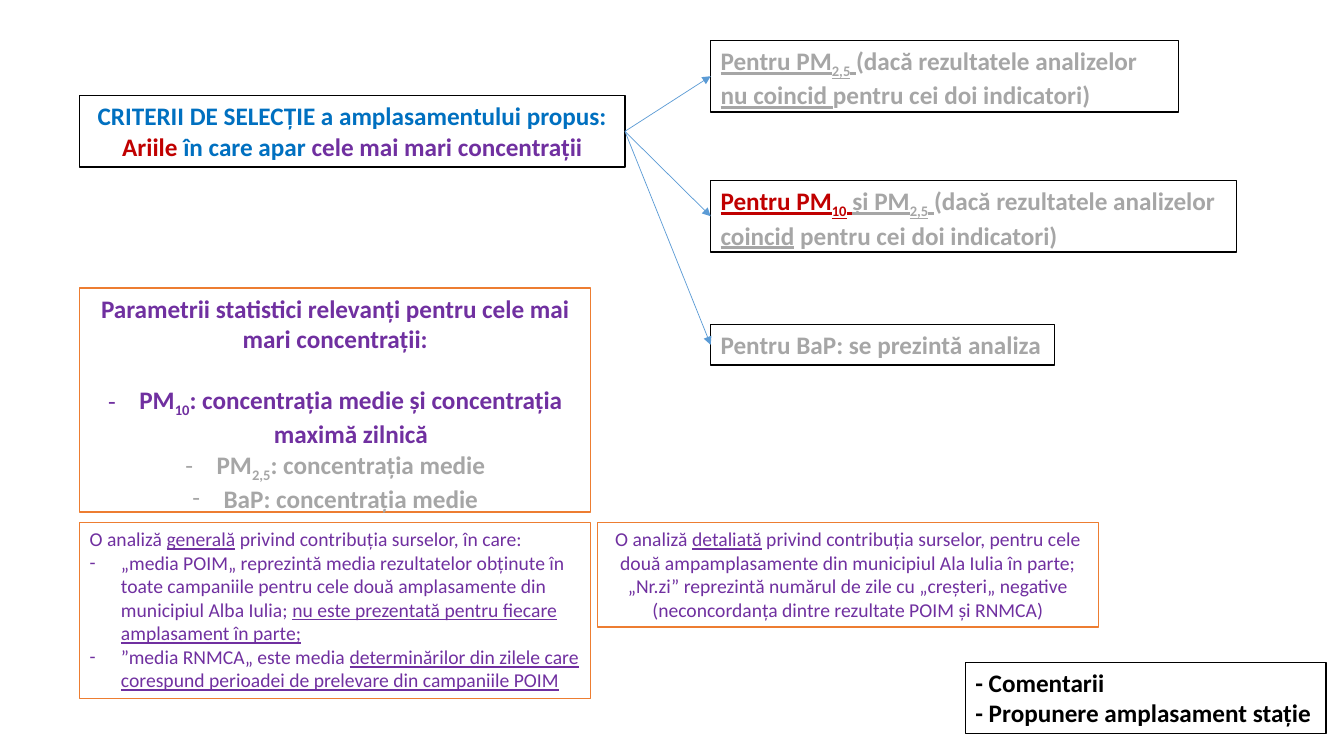
from lxml import etree
from pptx import Presentation
from pptx.dml.color import RGBColor
from pptx.enum.shapes import MSO_CONNECTOR, MSO_SHAPE
from pptx.enum.text import MSO_ANCHOR, PP_ALIGN
from pptx.oxml.ns import qn
from pptx.util import Cm, Pt

RECTANGLE = MSO_SHAPE.RECTANGLE
STRAIGHT = MSO_CONNECTOR.STRAIGHT
TOP = MSO_ANCHOR.TOP
LEFT, CENTER = PP_ALIGN.LEFT, PP_ALIGN.CENTER
LEFT_SITE, RIGHT_SITE = 1, 3
COLORS = {
    "white": "FFFFFF", "black": "000000", "blue": "0070C0", "red": "C00000",
    "purple": "7030A0", "gray": "A6A6A6", "orange": "ED7D31", "arrow": "5B9BD5",
}
LEFT_EDGE, BRANCH_EDGE = 2.01, 17.91
LEFT_WIDTH, TWO_LINES = 12.88, 1.8
ANALYSIS_TOP = 13.16


def color(name):
    """Return the named colour."""
    return RGBColor.from_string(COLORS[name])


def add_bullet(paragraph):
    """Give a paragraph a dash and a hanging indent."""
    properties = paragraph._p.get_or_add_pPr()
    properties.set("marL", str(Cm(0.79)))
    properties.set("indent", str(-Cm(0.79)))
    etree.SubElement(properties, qn("a:buFont")).set("typeface", "Calibri")
    etree.SubElement(properties, qn("a:buChar")).set("char", "-")


def add_run(paragraph, size, bold, text, color_name, style=""):
    """Add a run; style may hold u for underline and s for subscript."""
    run = paragraph.add_run()
    run.text = text
    font = run.font
    font.name, font.size, font.bold = "Calibri", Pt(size), bold
    font.underline = "u" in style
    font.color.rgb = color(color_name)
    if "s" in style:
        font._element.set("baseline", "-25000")


def add_box(slide, bounds, paragraphs, line="black", align=LEFT,
            size=18, bold=True, first_bullet=None, bullet_gap=0):
    """Add an outlined box of rich paragraphs, bulleted from first_bullet on."""
    shape = slide.shapes.add_shape(RECTANGLE, *map(Cm, bounds))
    shape.shadow.inherit = False
    shape.fill.solid()
    shape.fill.fore_color.rgb = color("white")
    shape.line.color.rgb = color(line)
    shape.line.width = Pt(1)
    frame = shape.text_frame
    frame.word_wrap = True
    frame.vertical_anchor = TOP
    for index, runs in enumerate(paragraphs):
        paragraph = frame.add_paragraph() if index else frame.paragraphs[0]
        paragraph.alignment = align
        if index and index == first_bullet:
            paragraph.space_before = Pt(bullet_gap)
        if first_bullet is not None and index >= first_bullet:
            add_bullet(paragraph)
        for run in runs:
            add_run(paragraph, size, bold, *run)
    return shape


def add_arrow(slide, source, target):
    """Join the right side of source to the left side of target."""
    connector = slide.shapes.add_connector(STRAIGHT, 0, 0, 0, 0)
    connector.begin_connect(source, RIGHT_SITE)
    connector.end_connect(target, LEFT_SITE)
    connector.line.color.rgb = color("arrow")
    connector.line.width = Pt(0.5)
    etree.SubElement(connector.line._get_or_add_ln(), qn("a:tailEnd")).set("type", "triangle")
    etree.SubElement(connector._element.spPr, qn("a:effectLst"))


def add_criteria(slide):
    """Add the selection criteria and their three branches."""
    criteria = add_box(slide, (LEFT_EDGE, 2.41, 13.74, TWO_LINES), [
        [("CRITERII DE SELECȚIE a amplasamentului propus:", "blue")],
        [("Ariile", "red"), (" în care apar ", "blue"),
         ("cele mai mari concentrații", "purple")],
    ], align=CENTER)
    branches = [
        (1.02, 11.79, TWO_LINES, [
            ("Pentru PM", "gray", "u"), ("2,5", "gray", "us"), (" ", "gray", "u"),
            ("(dacă rezultatele analizelor ", "gray"), ("nu coincid ", "gray", "u"),
            ("pentru cei doi indicatori)", "gray")]),
        (4.55, 13.26, TWO_LINES, [
            ("Pentru PM", "red", "u"), ("10", "red", "us"), (" ", "red", "u"),
            ("și PM", "gray", "u"), ("2,5", "gray", "us"), (" ", "gray", "u"),
            ("(dacă rezultatele analizelor ", "gray"), ("coincid", "gray", "u"),
            (" pentru cei doi indicatori)", "gray")]),
        (8.18, 8.66, 1.02, [("Pentru BaP: se prezintă analiza", "gray")]),
    ]
    for top, width, height, runs in branches:
        branch = add_box(slide, (BRANCH_EDGE, top, width, height), [runs])
        add_arrow(slide, criteria, branch)


def add_parameters(slide):
    """Add the relevant statistical parameters."""
    add_box(slide, (LEFT_EDGE, 7.26, LEFT_WIDTH, 5.64), [
        [("Parametrii statistici relevanți pentru cele mai mari concentrații:", "purple")],
        [("PM", "purple"), ("10", "purple", "s"),
         (": concentrația medie și concentrația maximă zilnică", "purple")],
        [("PM", "gray"), ("2,5", "gray", "s"), (": concentrația medie", "gray")],
        [("BaP: concentrația medie", "gray")],
    ], line="orange", align=CENTER, first_bullet=1, bullet_gap=22)


def add_analyses(slide):
    """Add the general and the detailed source analysis."""
    add_box(slide, (LEFT_EDGE, ANALYSIS_TOP, LEFT_WIDTH, 4.45), [
        [("O analiză ", "purple"), ("generală", "purple", "u"),
         (" privind contribuția surselor, în care:", "purple")],
        [("„media POIM„ reprezintă media rezultatelor obținute în toate campaniile "
          "pentru cele două amplasamente din municipiul Alba Iulia; ", "purple"),
         ("nu este prezentată pentru fiecare amplasament în parte;", "purple", "u")],
        [("”media RNMCA„ este media ", "purple"),
         ("determinărilor din zilele care corespund perioadei de prelevare "
          "din campaniile POIM", "purple", "u")],
    ], line="orange", size=14, bold=False, first_bullet=1)
    add_box(slide, (15.06, ANALYSIS_TOP, 12.62, 2.64), [
        [("O analiză ", "purple"), ("detaliată", "purple", "u"),
         (" privind contribuția surselor, pentru cele două ampamplasamente din "
          "municipiul Ala Iulia în parte; „Nr.zi” reprezintă numărul de zile cu "
          "„creșteri„ negative (neconcordanța dintre rezultate POIM și RNMCA)", "purple")],
    ], line="orange", align=CENTER, size=14, bold=False)


def main():
    """Build the slide on siting criteria and save it."""
    presentation = Presentation()
    presentation.slide_width, presentation.slide_height = Cm(33.87), Cm(19.05)
    slide = presentation.slides.add_slide(presentation.slide_layouts[6])
    add_criteria(slide)
    add_parameters(slide)
    add_analyses(slide)
    add_box(slide, (24.33, 16.69, 9.09, TWO_LINES), [
        [("- Comentarii", "black")],
        [("- Propunere amplasament stație", "black")],
    ])
    presentation.save("out.pptx")


if __name__ == "__main__":
    main()
